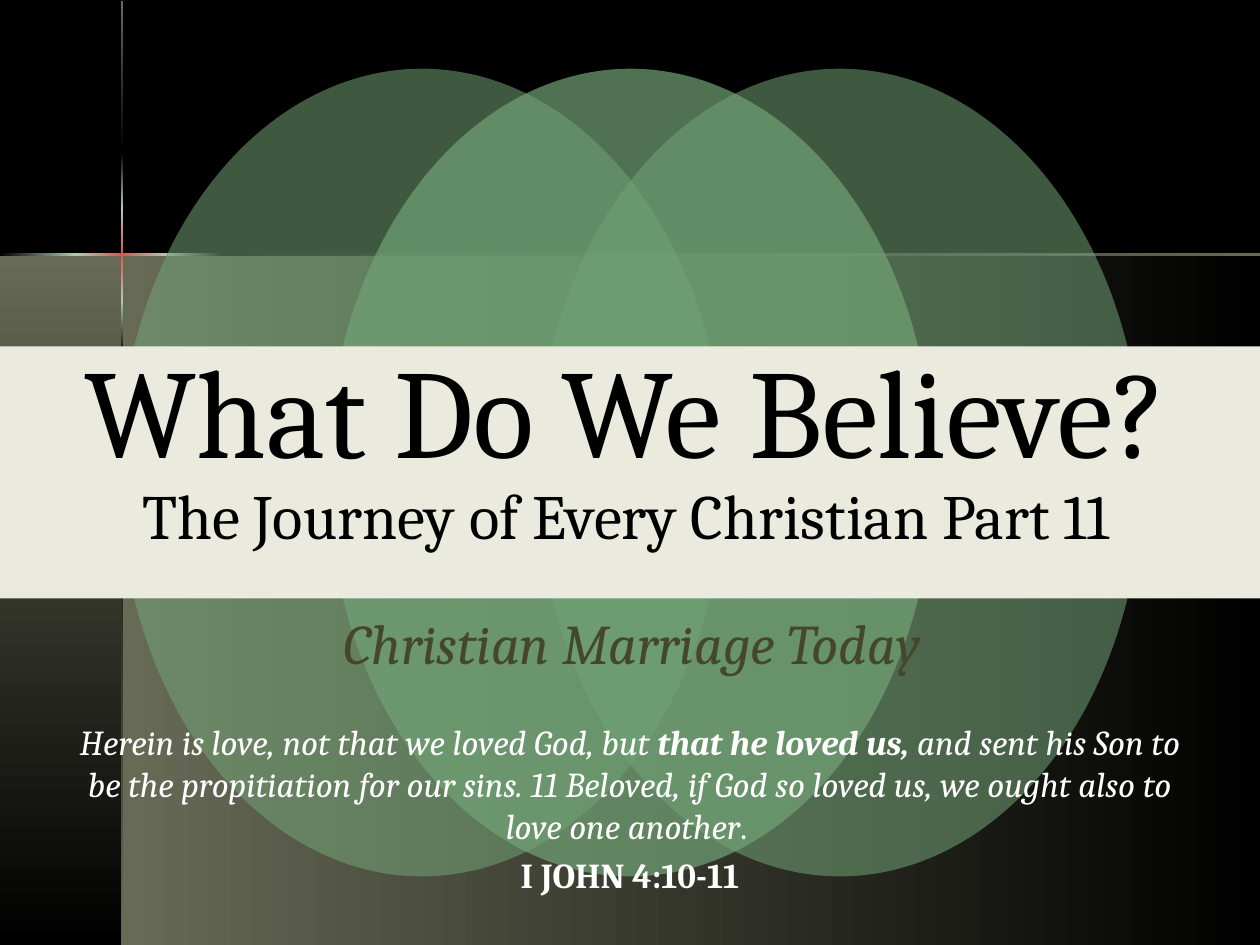
from itertools import pairwise

from lxml.etree import SubElement
from pptx import Presentation
from pptx.dml.color import RGBColor
from pptx.enum.shapes import MSO_SHAPE
from pptx.enum.text import MSO_ANCHOR, MSO_AUTO_SIZE, PP_ALIGN
from pptx.oxml.ns import qn
from pptx.util import Pt

COLORS = {
    "black": "000000",
    "olive": "676A55",
    "mint": "B0CCB0",
    "red": "DB5353",
    "green": "72A376",
    "cream": "EAEBDE",
    "white": "FFFFFF",
    "moss": "45472B",
}


class TitleSlide:
    """Draws styled elements on one slide, with lengths in points."""

    font = "Cambria"

    def __init__(self, slide):
        self.slide = slide
        fill = slide.background.fill
        fill.solid()
        fill.fore_color.rgb = self.color("black")

    def color(self, name):
        return RGBColor.from_string(COLORS[name])

    def shape(self, kind, left, top, width, height):
        shape = self.slide.shapes.add_shape(kind, Pt(left), Pt(top), Pt(width), Pt(height))
        shape.shadow.inherit = False
        shape.line.fill.background()
        return shape

    def solid(self, kind, left, top, width, height, color, opacity=100):
        shape = self.shape(kind, left, top, width, height)
        shape.fill.solid()
        shape.fill.fore_color.rgb = self.color(color)
        if opacity < 100:
            swatch = shape.fill._xPr.find(qn("a:solidFill")).find(qn("a:srgbClr"))
            SubElement(swatch, qn("a:alpha"), val=str(opacity * 1000))

    def gradient(self, left, top, width, height, colors, downward=False):
        shape = self.shape(MSO_SHAPE.RECTANGLE, left, top, width, height)
        shape.fill.gradient()
        shape.fill.gradient_angle = 270 if downward else 0
        stops = shape.fill._xPr.find(qn("a:gradFill")).find(qn("a:gsLst"))
        for stop in list(stops):
            stops.remove(stop)
        for index, name in enumerate(colors):
            position = 100000 * index // (len(colors) - 1)
            stop = SubElement(stops, qn("a:gs"), pos=str(position))
            SubElement(stop, qn("a:srgbClr"), val=COLORS[name])

    def textbox(self, left, top, width, height, wrap=True):
        box = self.slide.shapes.add_textbox(Pt(left), Pt(top), Pt(width), Pt(height))
        box.text_frame.word_wrap = wrap
        return box.text_frame

    def style(self, paragraph, size, color, align=PP_ALIGN.CENTER):
        paragraph.alignment = align
        paragraph.font.name = self.font
        paragraph.font.size = Pt(size)
        paragraph.font.color.rgb = self.color(color)

    def run(self, paragraph, text, size=None, bold=None, italic=None):
        run = paragraph.add_run()
        run.text = text
        run.font.bold = bold
        run.font.italic = italic
        if size:
            run.font.size = Pt(size)


def main():
    deck = Presentation()
    deck.slide_width, deck.slide_height = Pt(720), Pt(540)
    page = TitleSlide(deck.slides.add_slide(deck.slide_layouts[6]))

    cross_x, cross_y, thin = 69.84, 145.44, 1.4
    page.gradient(cross_x, cross_y, 720 - cross_x, 540 - cross_y, ["olive", "black"])
    page.gradient(0, cross_y, cross_x, 540 - cross_y, ["olive", "black"], downward=True)

    glow = [["black", "mint"], ["mint", "red", "mint"], ["mint", "black"], ["black", "olive"]]
    column_stops = pairwise([0.7, 87.1, 118.8, 171.4, 203, 540])
    for (start, end), colors in zip(column_stops, [["olive", "black"], *glow]):
        page.gradient(cross_x - thin / 2, start, thin, end - start, colors, downward=True)
    row_stops = pairwise([0, 43.6, 95.8, 127.4, 720])
    for (start, end), colors in zip(row_stops, glow):
        page.gradient(start, cross_y - thin / 2, end - start, thin, colors)

    for left, opacity in [(68.1, 55), (306.9, 55), (187.3, 70)]:
        page.solid(MSO_SHAPE.OVAL, left, 39.3, 346, 461.5, "green", opacity)
    page.solid(MSO_SHAPE.RECTANGLE, 0, 198, 720, 144, "cream")

    title_frame = page.textbox(3.6, 211, 707.8, 132.5)
    title_frame.vertical_anchor = MSO_ANCHOR.MIDDLE
    title_frame.margin_bottom = Pt(42)
    title = title_frame.paragraphs[0]
    page.style(title, 72, "black")
    title.line_spacing = 0.9
    page.run(title, "What Do We Believe?")
    title.add_line_break()
    page.run(title, "The Journey of Every Christian Part 11", size=36)

    scripture = page.textbox(36, 408.2, 648, 138.2)
    verse, citation = scripture.paragraphs[0], scripture.add_paragraph()
    for paragraph in (verse, citation):
        page.style(paragraph, 20, "white")
        paragraph.space_before = Pt(4)
    page.run(verse, "Herein is love, not that we loved God, but ", italic=True)
    page.run(verse, "that he loved us, ", bold=True, italic=True)
    page.run(verse, "and sent his Son to be the propitiation for our sins. 11 Beloved, "
             "if God so loved us, we ought also to love one another", italic=True)
    page.run(verse, ". ")
    page.run(citation, "I JOHN 4:10-11", bold=True)

    topic_frame = page.textbox(189.4, 344.2, 359.3, 46, wrap=False)
    topic_frame.auto_size = MSO_AUTO_SIZE.SHAPE_TO_FIT_TEXT
    topic = topic_frame.paragraphs[0]
    page.style(topic, 32, "moss", PP_ALIGN.LEFT)
    page.run(topic, "Christian Marriage Today", italic=True)

    deck.save("out.pptx")


if __name__ == "__main__":
    main()
